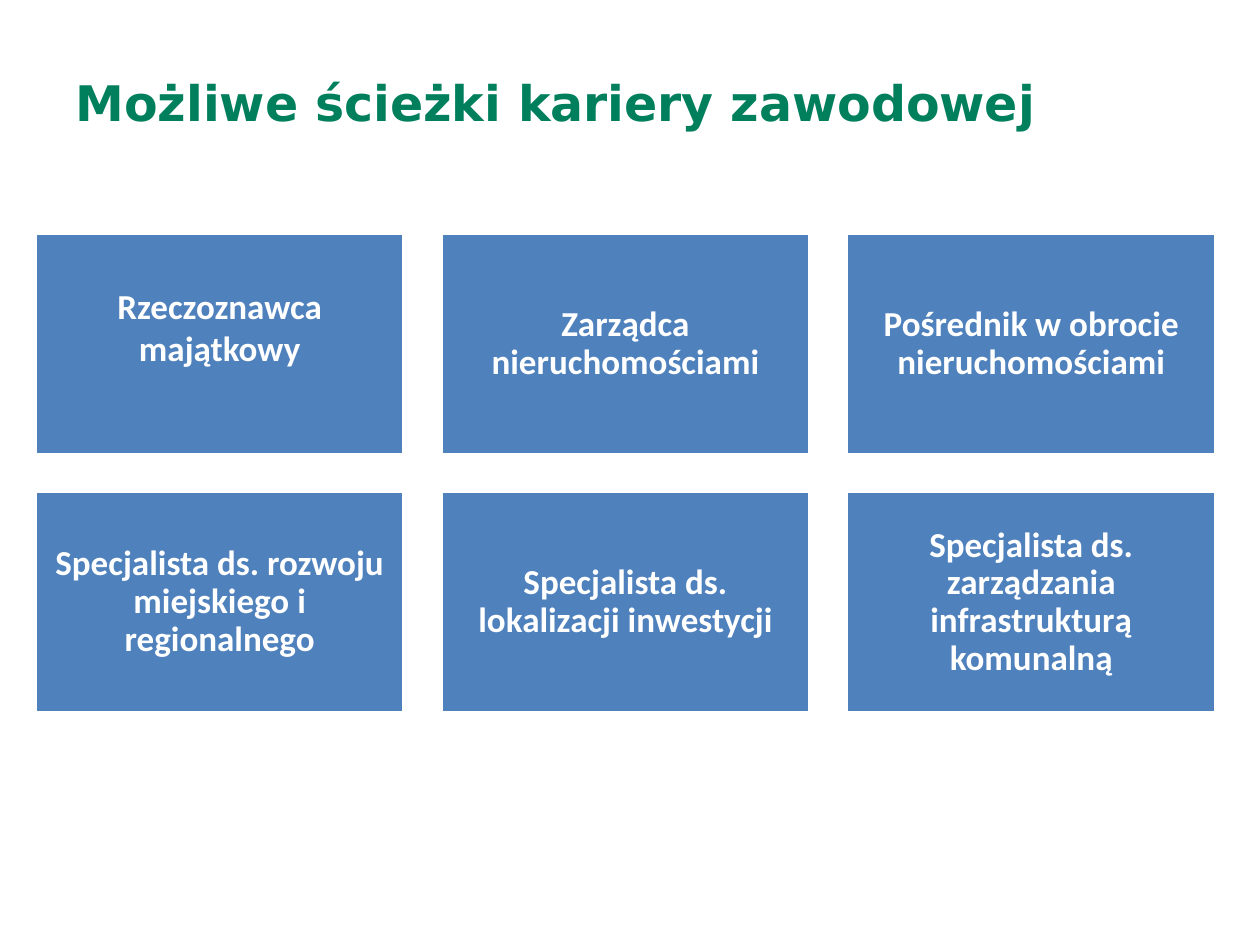
from pptx import Presentation
from pptx import util as u
from pptx.dml.color import RGBColor
from pptx.enum import shapes, text

GREEN = RGBColor(0x00, 0x7F, 0x5D)
BLUE = RGBColor(0x4F, 0x81, 0xBD)
WHITE = RGBColor(0xFF, 0xFF, 0xFF)

LEFT, TOP = 0.71, 4.7
BOX_WIDTH, BOX_HEIGHT = 7.44, 4.47
COLUMN_STEP, ROW_STEP = 8.18, 5.21
COLUMNS = 3
INSET = 0.2

CAREERS = [
    "Rzeczoznawca majątkowy",
    "Zarządca nieruchomościami",
    "Pośrednik w obrocie nieruchomościami",
    "Specjalista ds. rozwoju miejskiego i regionalnego",
    "Specjalista ds. lokalizacji inwestycji",
    "Specjalista ds. zarządzania infrastrukturą komunalną",
]


class CareerSlide:
    """Holds the slide and the style of its title and boxes."""

    title_font, title_size = "DejaVu Sans", 28
    box_font, box_size = "Calibri", 20

    def __init__(self, presentation):
        self.slide = presentation.slides.add_slide(presentation.slide_layouts[5])

    def format_runs(self, paragraph, name, size, color):
        for run in paragraph.runs:
            run.font.name = name
            run.font.size = u.Pt(size)
            run.font.bold = True
            run.font.color.rgb = color

    def title(self, wording):
        shape = self.slide.shapes.title
        shape.left, shape.top = u.Cm(1.27), u.Cm(0.76)
        shape.width, shape.height = u.Cm(22.86), u.Cm(2.57)
        frame = shape.text_frame
        frame.text = wording
        frame.vertical_anchor = text.MSO_ANCHOR.MIDDLE
        paragraph = frame.paragraphs[0]
        paragraph.alignment = text.PP_ALIGN.LEFT
        self.format_runs(paragraph, self.title_font, self.title_size, GREEN)

    def box(self, wording, left, top, line_spacing=0.9, lift=0):
        """Draw a box; lift is extra bottom inset that raises the text."""
        shape = self.slide.shapes.add_shape(
            shapes.MSO_SHAPE.RECTANGLE,
            u.Cm(left), u.Cm(top), u.Cm(BOX_WIDTH), u.Cm(BOX_HEIGHT))
        shape.shadow.inherit = False
        shape.fill.solid()
        shape.fill.fore_color.rgb = BLUE
        shape.line.color.rgb = WHITE
        shape.line.width = u.Pt(2)
        frame = shape.text_frame
        frame.text = wording
        frame.word_wrap = True
        frame.vertical_anchor = text.MSO_ANCHOR.MIDDLE
        frame.margin_left = frame.margin_right = frame.margin_top = u.Cm(INSET)
        frame.margin_bottom = u.Cm(INSET + lift)
        paragraph = frame.paragraphs[0]
        paragraph.alignment = text.PP_ALIGN.CENTER
        paragraph.line_spacing = line_spacing
        self.format_runs(paragraph, self.box_font, self.box_size, WHITE)


def main():
    presentation = Presentation()
    presentation.slide_width, presentation.slide_height = u.Cm(25.4), u.Cm(19.05)
    career_slide = CareerSlide(presentation)
    career_slide.title("Możliwe ścieżki kariery zawodowej")
    for index, career in enumerate(CAREERS):
        row, column = divmod(index, COLUMNS)
        style = {"line_spacing": 1.0, "lift": 0.7} if index == 0 else {}
        career_slide.box(career, LEFT + column * COLUMN_STEP,
                         TOP + row * ROW_STEP, **style)
    presentation.save("out.pptx")


if __name__ == "__main__":
    main()
